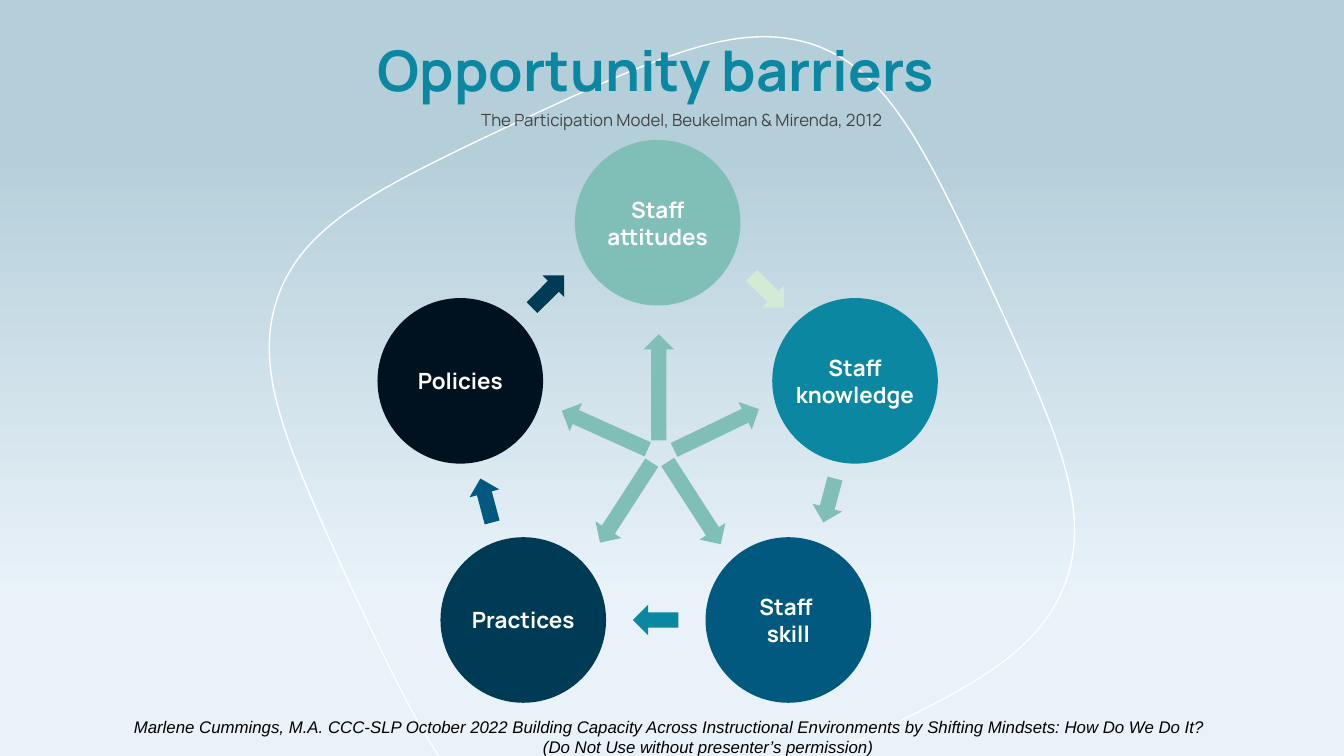
from lxml.etree import SubElement
from pptx import Presentation
from pptx.dml.color import RGBColor
from pptx.enum.shapes import MSO_SHAPE
from pptx.enum.text import MSO_ANCHOR, MSO_AUTO_SIZE, PP_ALIGN
from pptx.oxml.ns import qn
from pptx.util import Cm, Pt

LEFT, RIGHT = MSO_SHAPE.LEFT_ARROW, MSO_SHAPE.RIGHT_ARROW
TEAL, BLUE, NAVY, MINT = "0B87A1", "01597F", "003B55", "80BFB7"
CIRCLE_SIZE = 3.13
ARROW_WIDTH = 0.58
RING_ARROW_LENGTH = 0.86

# label, center x, center y, fill, label width, label height
BARRIERS = [
    ("Staff attitudes", 12.43, 4.21, MINT, 2.21, 1.12),
    ("Staff knowledge", 16.16, 7.2, TEAL, 2.95, 1.12),
    ("Staff \vskill", 14.9, 11.72, BLUE, 2.69, 0.61),
    ("Practices", 9.89, 11.72, NAVY, 2.87, 1.12),
    ("Policies", 8.7, 7.2, "001120", 2.95, 1.12),
]
# preset, center x, center y, rotation, fill
RING_ARROWS = [
    (RIGHT, 14.51, 5.51, 45, "D3EBD5"),
    (LEFT, 15.67, 9.46, 285, MINT),
    (LEFT, 12.39, 11.72, 0, TEAL),
    (LEFT, 9.19, 9.46, 75, BLUE),
    (RIGHT, 10.36, 5.51, 315, NAVY),
]
# preset, center x, center y, rotation, length
SPOKES = [
    (LEFT, 12.45, 7.32, 90, 2.01),
    (LEFT, 13.54, 8.12, 154.3, 1.78),
    (RIGHT, 13.12, 9.51, 57.2, 1.85),
    (LEFT, 11.83, 9.5, 302.9, 1.8),
    (LEFT, 11.43, 8.13, 24.2, 1.78),
]
BLOB_LEFT, BLOB_TOP, BLOB_SIZE = 5.08, 0.69, 15.21
BLOB_START = (15.52, 14.33)
# Each row holds two control points and the end of one curve.
BLOB_CURVES = [
    ((18.16, 13.11), (19.63, 12.42), (20.14, 11)),
    ((20.65, 9.6), (19.96, 8.13), (18.75, 5.49)),
    ((17.5, 2.84), (16.81, 1.37), (15.42, 0.86)),
    ((14, 0.36), (12.52, 1.04), (9.88, 2.26)),
    ((7.24, 3.51), (5.77, 4.19), (5.26, 5.59)),
    ((4.75, 7.01), (5.44, 8.46), (6.65, 11.13)),
    ((7.9, 13.77), (8.59, 15.24), (9.98, 15.75)),
    ((11.4, 16.26), (12.88, 15.57), BLOB_START),
]


def color(value):
    return RGBColor.from_string(value)


def paint_background(slide):
    fill = slide.background.fill
    fill.gradient()
    fill.gradient_angle = 270
    stops = zip(fill.gradient_stops, (0.2, 0.79), ("B5CFDA", "E9F2F9"))
    for stop, position, value in stops:
        stop.position = position
        stop.color.rgb = color(value)


def set_curves(shape, start, curves):
    """Replace the outline of a freeform by closed cubic curves."""
    outline = next(shape.element.iter(qn("a:path")))
    for child in list(outline):
        outline.remove(child)
    commands = [("a:moveTo", [start])]
    commands += [("a:cubicBezTo", curve) for curve in curves]
    for tag, points in commands:
        command = SubElement(outline, qn(tag))
        for x, y in points:
            SubElement(command, qn("a:pt"), x=str(Cm(x) - shape.left),
                       y=str(Cm(y) - shape.top))
    SubElement(outline, qn("a:close"))


def add_blob(slide):
    right, bottom = BLOB_LEFT + BLOB_SIZE, BLOB_TOP + BLOB_SIZE
    builder = slide.shapes.build_freeform(Cm(BLOB_LEFT), Cm(BLOB_TOP))
    builder.add_line_segments([(Cm(right), Cm(bottom))])
    blob = builder.convert_to_shape()
    set_curves(blob, BLOB_START, BLOB_CURVES)
    blob.shadow.inherit = False
    blob.fill.background()
    blob.line.color.rgb = color("FFFFFF")
    blob.line.width = Pt(0.75)
    return blob


def add_centered_shape(slide, preset, x, y, width, height, fill, rotation=0):
    shape = slide.shapes.add_shape(
        preset, Cm(x - width / 2), Cm(y - height / 2), Cm(width), Cm(height))
    shape.rotation = rotation
    shape.shadow.inherit = False
    shape.fill.solid()
    shape.fill.fore_color.rgb = color(fill)
    shape.line.fill.background()


def format_text(shape, text, size, value, font="Manrope", bold=False, italic=False,
                anchor=MSO_ANCHOR.TOP, insets=(0.1, 0.05)):
    frame = shape.text_frame
    frame.text = text
    frame.word_wrap = True
    frame.auto_size = MSO_AUTO_SIZE.NONE
    frame.vertical_anchor = anchor
    frame.margin_left = frame.margin_right = Cm(insets[0])
    frame.margin_top = frame.margin_bottom = Cm(insets[1])
    for paragraph in frame.paragraphs:
        paragraph.alignment = PP_ALIGN.CENTER
        paragraph.font.name = font
        paragraph.font.size = Pt(size)
        paragraph.font.bold = bold
        paragraph.font.italic = italic
        paragraph.font.color.rgb = color(value)


def add_text(slide, left, top, width, height, text, size, value, **options):
    box = slide.shapes.add_textbox(Cm(left), Cm(top), Cm(width), Cm(height))
    format_text(box, text, size, value, **options)
    return box


def place_title(slide, blob):
    title = slide.shapes.title
    title.left, title.top = Cm(4.93), Cm(0.63)
    title.width, title.height = Cm(14.94), Cm(1.07)
    format_text(title, "Opportunity barriers", 30, TEAL, bold=True)
    blob.element.addnext(title.element)  # the title lies above the outline


def add_cycle(slide):
    for _, x, y, fill, _, _ in BARRIERS:
        add_centered_shape(slide, MSO_SHAPE.OVAL, x, y, CIRCLE_SIZE, CIRCLE_SIZE, fill)
    for preset, x, y, rotation, fill in RING_ARROWS:
        add_centered_shape(slide, preset, x, y, RING_ARROW_LENGTH, ARROW_WIDTH,
                           fill, rotation)
    for label, x, y, _, width, height in BARRIERS:
        add_text(slide, x - width / 2, y - height / 2, width, height, label, 12,
                 "FFFFFF", bold=True, anchor=MSO_ANCHOR.MIDDLE)
    for preset, x, y, rotation, length in SPOKES:
        add_centered_shape(slide, preset, x, y, length, ARROW_WIDTH, MINT, rotation)


def add_footer(slide):
    footer = add_text(
        slide, 2.28, 13.3, 22.2, 1.27,
        "Marlene Cummings, M.A. CCC-SLP October 2022 Building Capacity Across "
        "Instructional Environments by Shifting Mindsets: How Do We Do It?\n"
        "(Do Not Use without presenter’s permission)",
        9, "000000", font="Arial", italic=True, insets=(0.25, 0.25))
    footer.text_frame.paragraphs[0].alignment = PP_ALIGN.LEFT


def main():
    presentation = Presentation()
    presentation.slide_width, presentation.slide_height = Cm(25.4), Cm(14.29)
    slide = presentation.slides.add_slide(presentation.slide_layouts[5])
    paint_background(slide)
    place_title(slide, add_blob(slide))
    add_cycle(slide)
    add_text(slide, 8.04, 2.03, 9.68, 0.48,
             "The Participation Model, Beukelman & Mirenda, 2012", 9, "434343")
    add_footer(slide)
    presentation.save("out.pptx")


if __name__ == "__main__":
    main()
